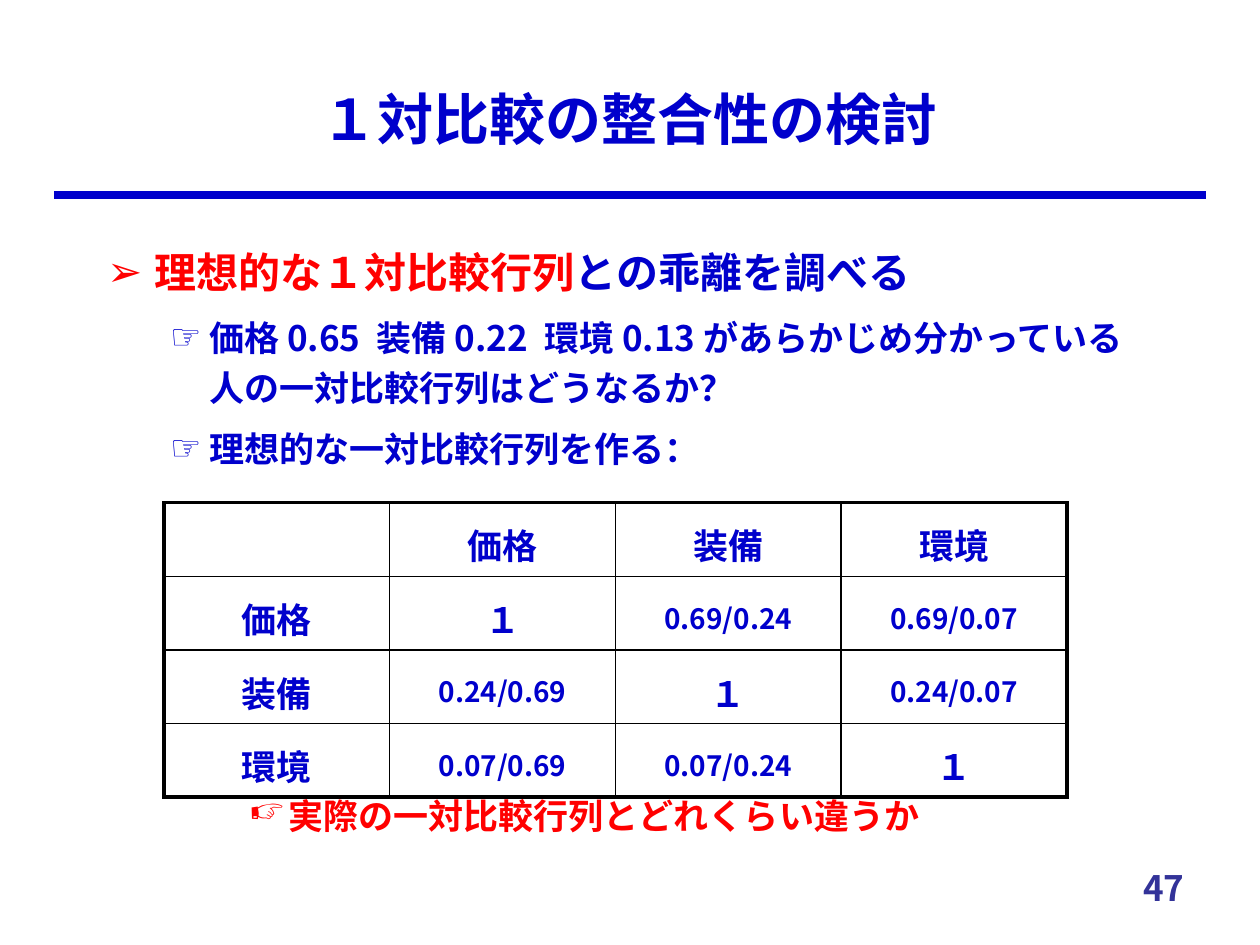
from lxml import etree
from pptx import Presentation
from pptx.dml.color import RGBColor
from pptx.enum.shapes import MSO_CONNECTOR
from pptx.enum.text import MSO_ANCHOR, MSO_AUTO_SIZE, PP_ALIGN
from pptx.oxml.ns import qn
from pptx.util import Inches, Pt

STRAIGHT = MSO_CONNECTOR.STRAIGHT
TOP, MIDDLE = MSO_ANCHOR.TOP, MSO_ANCHOR.MIDDLE
NO_AUTOFIT = MSO_AUTO_SIZE.NONE
CENTER, RIGHT = PP_ALIGN.CENTER, PP_ALIGN.RIGHT

BLUE = RGBColor(0x00, 0x00, 0xCC)
RED = RGBColor(0xFF, 0x00, 0x00)
INDIGO = RGBColor(0x33, 0x33, 0x99)
BLACK = RGBColor(0x00, 0x00, 0x00)
FONT = "Noto Sans CJK JP"

MATRIX = [
    ["", "価格", "装備", "環境"],
    ["価格", "１", "0.69/0.24", "0.69/0.07"],
    ["装備", "0.24/0.69", "１", "0.24/0.07"],
    ["環境", "0.07/0.69", "0.07/0.24", "１"],
]


def add_span(para, text, size, color):
    span = para.add_run()
    span.text = text
    span.font.name = FONT
    span.font.size = Pt(size)
    span.font.bold = True
    span.font.color.rgb = color
    east_asian = etree.SubElement(span.font._element, qn("a:ea"))
    east_asian.set("typeface", FONT)


def set_spacing(para):
    para.line_spacing = 1.2
    para.space_before = Pt(0)
    before = para._p.pPr.find(qn("a:spcBef"))
    before.clear()
    etree.SubElement(before, qn("a:spcPct")).set("val", "30000")


def set_bullet(para, level):
    mark, margin, hang = [("➢", 0.38, 0.38), ("☞", 0.81, 0.31)][level]
    para.level = level
    set_spacing(para)
    properties = para._p.pPr
    properties.set("marL", str(Inches(margin)))
    properties.set("indent", str(-Inches(hang)))
    etree.SubElement(properties, qn("a:buChar")).set("char", mark)


def set_frame(shape, anchor):
    frame = shape.text_frame
    frame.word_wrap = True
    frame.auto_size = NO_AUTOFIT
    frame.vertical_anchor = anchor
    return frame


def move(shape, box):
    shape.left, shape.top, shape.width, shape.height = box


def add_rule(page, left, top, width):
    rule = page.shapes.add_connector(STRAIGHT, left, top, left + width, top)
    rule.line.color.rgb = BLUE
    rule.line.width = Pt(4.5)
    etree.SubElement(rule._element.spPr, qn("a:effectLst"))


def fill_title(page, box):
    title = page.shapes.title
    move(title, box)
    para = set_frame(title, MIDDLE).paragraphs[0]
    para.alignment = CENTER
    add_span(para, "１対比較の整合性の検討", 32, BLUE)


def fill_body(page, box):
    body = page.placeholders[1]
    move(body, box)
    frame = set_frame(body, TOP)
    lead = frame.paragraphs[0]
    set_bullet(lead, 0)
    add_span(lead, "理想的な１対比較行列", 24, RED)
    add_span(lead, "との乖離を調べる", 24, BLUE)
    for text in (
        "価格 0.65  装備 0.22  環境 0.13 があらかじめ分かっている人の一対比較行列はどうなるか？",
        "理想的な一対比較行列を作る：",
    ):
        para = frame.add_paragraph()
        set_bullet(para, 1)
        add_span(para, text, 20, BLUE)


def set_borders(cell, outer_sides):
    properties = cell._tc.get_or_add_tcPr()
    for side in "LRTB":
        width = Pt(2.25 if side in outer_sides else 1)
        line = etree.SubElement(properties, qn(f"a:ln{side}"), w=str(width))
        fill = etree.SubElement(line, qn("a:solidFill"))
        etree.SubElement(fill, qn("a:srgbClr"), val=str(BLACK))


def add_matrix(page, box):
    last = len(MATRIX) - 1
    table = page.shapes.add_table(last + 1, last + 1, *box).table
    table.first_row = False
    table.horz_banding = False
    for row, values in enumerate(MATRIX):
        for column, text in enumerate(values):
            cell = table.cell(row, column)
            edges = {"L": column == 0, "R": column == last,
                     "T": row == 0, "B": row == last}
            set_borders(cell, [side for side in edges if edges[side]])
            cell.fill.background()
            cell.vertical_anchor = MIDDLE
            para = cell.text_frame.paragraphs[0]
            para.alignment = CENTER
            set_spacing(para)
            if text:
                add_span(para, text, 16 if "/" in text else 20, BLUE)


def add_question(page, box):
    frame = set_frame(page.shapes.add_textbox(*box), TOP)
    para = frame.paragraphs[0]
    set_bullet(para, 1)
    add_span(para, "実際の一対比較行列とどれくらい違うか", 20, RED)


def add_page_number(page, box):
    frame = set_frame(page.shapes.add_textbox(*box), TOP)
    para = frame.paragraphs[0]
    para.alignment = RIGHT
    add_span(para, "47", 20, INDIGO)


def inches(*lengths):
    return [Inches(length) for length in lengths]


def main():
    deck = Presentation()
    deck.slide_width, deck.slide_height = inches(10, 7.5)
    page = deck.slides.add_slide(deck.slide_layouts[1])
    add_rule(page, *inches(0.43, 1.55, 9.14))
    add_page_number(page, inches(7.42, 6.83, 2.08, 0.5))
    fill_title(page, inches(0.75, 0.52, 8.5, 0.83))
    fill_body(page, inches(0.75, 1.83, 8.5, 4.83))
    add_matrix(page, inches(1.3, 3.99, 7.17, 2))
    add_question(page, inches(1.38, 6.19, 6.77, 0.63))
    deck.save("out.pptx")


if __name__ == "__main__":
    main()
